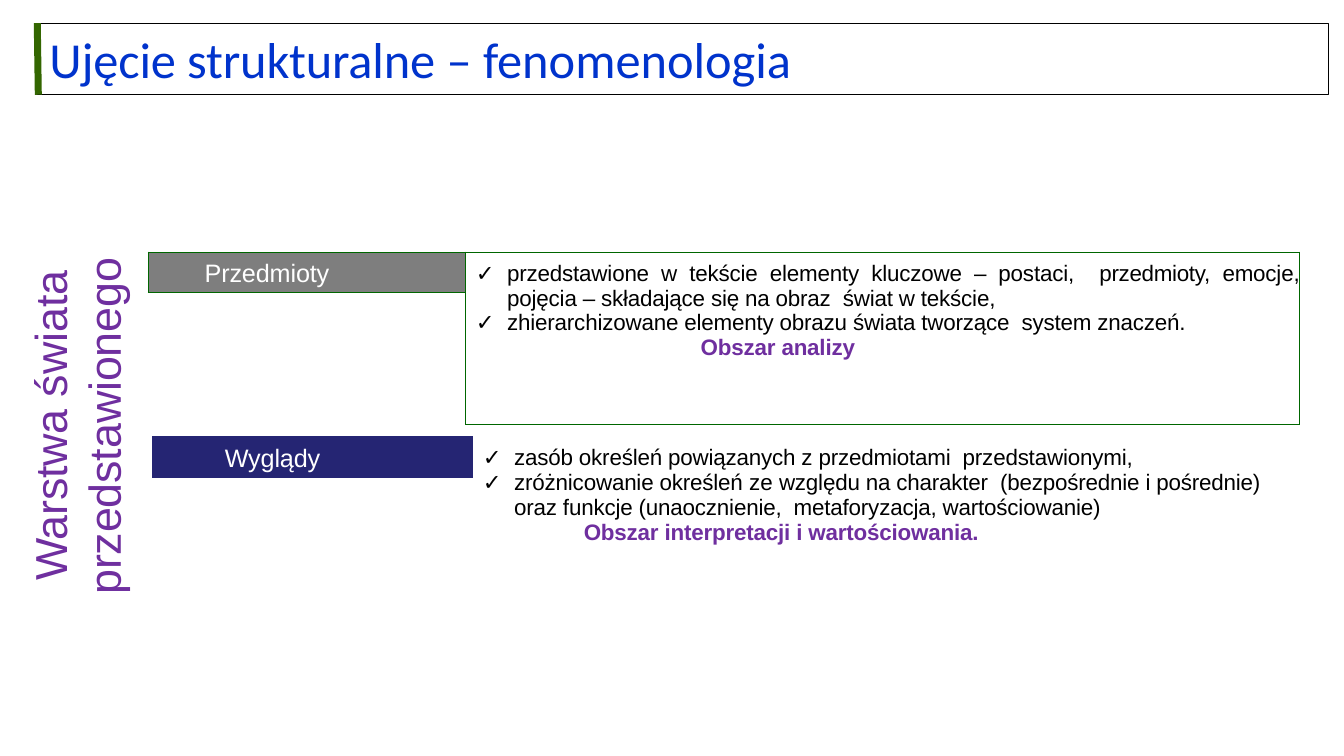
from pptx import Presentation
from pptx.dml.color import RGBColor
from pptx.enum.shapes import MSO_CONNECTOR, MSO_SHAPE
from pptx.enum.text import MSO_ANCHOR, PP_ALIGN
from pptx.oxml import parse_xml
from pptx.oxml.ns import nsdecls, qn
from pptx.util import Inches, Pt

COLORS = {"title": "0033CC", "accent": "336600", "frame": "000000", "border": "006600",
          "purple": "6F2F9F", "gray": "7E7E7E", "navy": "252573",
          "white": "FFFFFF", "text": "000000"}
PLAIN_TABLE = "{2D5ABB26-0587-4C30-8999-92F81FD0307C}"

# Runs are (text, letter spacing in points).
TITLE = [("Ujęcie strukturalne ", -0.1), ("– fenomenologia", 0)]
SIDE_LABEL = [
    (0.15, [("Warstwa ", -0.2), ("świata", 0)]),
    (0.01, [("przedstawionego", -0.1)]),
]
LAYERS = [
    {
        "at": (1.47, 2.5), "columns": (3.15, 8.27), "rows": (0.4, 1.31),
        "label": "Przedmioty", "label_indent": 0.56, "fill": "gray",
        "align": PP_ALIGN.JUSTIFY,
        "points": [
            [("przedstawione w tekście elementy kluczowe – postaci,  ", -0.1),
             ("przedmioty, ", -0.2),
             ("emocje, pojęcia – składające się na obraz  świat w tekście,", -0.1)],
            [("zhierarchizowane elementy obrazu świata tworzące  system znaczeń.", -0.1)],
        ],
        "area": "Obszar analizy", "area_indent": 2.33,
        "borders": {
            (0, 0): {"L": 0.75, "R": 1, "T": 0.75, "B": 0.75},
            (0, 1): {"L": 1, "R": 0.75, "T": 0.75, "B": 0.75},
            (1, 0): {"R": 0.75, "T": 0.75},
            (1, 1): {"L": 0.75, "R": 0.75, "B": 0.75},
        },
    },
    {
        "at": (1.51, 4.33), "columns": (3.18, 8.27), "rows": (0.41, 1.31),
        "label": "Wyglądy", "label_indent": 0.72, "fill": "navy",
        "align": PP_ALIGN.LEFT,
        "points": [
            [("zasób określeń powiązanych z przedmiotami  przedstawionymi,", -0.1)],
            [("zróżnicowanie określeń ", -0.1), ("ze ", 0),
             ("względu na charakter  (bezpośrednie i pośrednie) oraz funkcje "
              "(unaocznienie,  metaforyzacja, wartościowanie)", -0.1)],
        ],
        "area": "Obszar interpretacji i wartościowania.", "area_indent": 1.1,
        "borders": {},
    },
]


def color(name):
    return RGBColor.from_string(COLORS[name])


def set_margins(holder, top):
    holder.margin_left = holder.margin_right = holder.margin_bottom = 0
    holder.margin_top = Inches(top)


def next_paragraph(frame):
    """Return the first paragraph while it is empty, else a new one."""
    first = frame.paragraphs[0]
    return frame.add_paragraph() if first.runs else first


def write(frame, runs, size, tint, font="Arial", left=0, hanging=0, bold=False, bullet=None):
    para = next_paragraph(frame)
    props = para._p.get_or_add_pPr()
    props.set("marL", str(Inches(left)))
    props.set("indent", str(-Inches(hanging)))
    if bullet:
        props.append(parse_xml(f'<a:buFont {nsdecls("a")} typeface="Arial"/>'))
        props.append(parse_xml(f'<a:buChar {nsdecls("a")} char="{bullet}"/>'))
        props.append(parse_xml(f'<a:tabLst {nsdecls("a")}>'
                               f'<a:tab pos="{Inches(left)}" algn="l"/></a:tabLst>'))
    for text, spacing in runs:
        span = para.add_run()
        span.text = text
        span.font.name = font
        span.font.size = Pt(size)
        span.font.bold = bold
        span.font.color.rgb = color(tint)
        span._r.get_or_add_rPr().set("spc", str(round(spacing * 100)))
    return para


def add_text_box(page, left, top, width, height, top_margin=0):
    frame = page.shapes.add_textbox(
        Inches(left), Inches(top), Inches(width), Inches(height)).text_frame
    frame.word_wrap = True
    set_margins(frame, top_margin)
    return frame


def set_borders(cell, widths):
    props = cell._tc.get_or_add_tcPr()
    sides = [side for side in "LRTB" if side in widths]
    for position, side in enumerate(sides):
        props.insert(position, parse_xml(
            f'<a:ln{side} {nsdecls("a")} w="{Pt(widths[side])}"><a:solidFill>'
            f'<a:srgbClr val="{COLORS["border"]}"/></a:solidFill></a:ln{side}>'))


def add_title(page):
    frame = page.shapes.add_shape(
        MSO_SHAPE.RECTANGLE, Inches(0.37), Inches(0.23), Inches(12.81), Inches(0.71))
    frame.shadow.inherit = False
    frame.fill.background()
    frame.line.color.rgb = color("frame")
    frame.line.width = Pt(0.75)

    title = add_text_box(page, 0.42, 0.25, 12.76, 0.63, 0.02)
    title.vertical_anchor = MSO_ANCHOR.MIDDLE
    write(title, TITLE, 36, "title", font="Calibri", left=0.07)

    accent = page.shapes.add_connector(
        MSO_CONNECTOR.STRAIGHT, Inches(0.37), Inches(0.23), Inches(0.38), Inches(0.94))
    accent.line.color.rgb = color("accent")
    accent.line.width = Pt(5)
    accent._element.spPr.append(parse_xml(f'<a:effectLst {nsdecls("a")}/>'))


def add_layer(page, layer):
    left, top = layer["at"]
    columns, rows = layer["columns"], layer["rows"]
    table = page.shapes.add_table(
        len(rows), len(columns), Inches(left), Inches(top),
        Inches(sum(columns)), Inches(sum(rows))).table
    table.first_row = table.horz_banding = False
    table._tbl.tblPr.find(qn("a:tableStyleId")).text = PLAIN_TABLE
    for column, width in zip(table.columns, columns):
        column.width = Inches(width)
    for row, height in zip(table.rows, rows):
        row.height = Inches(height)
    for row in range(len(rows)):
        for column in range(len(columns)):
            cell = table.cell(row, column)
            cell.fill.background()
            set_borders(cell, layer["borders"].get((row, column), {}))

    label, details = table.cell(0, 0), table.cell(0, 1)
    details.merge(table.cell(1, 1))
    label.fill.solid()
    label.fill.fore_color.rgb = color(layer["fill"])
    set_margins(label, 0.08)
    set_margins(details, 0.09)
    write(label.text_frame, [(layer["label"], -0.1)], 18, "white", left=layer["label_indent"])
    for runs in layer["points"]:
        para = write(details.text_frame, runs, 16, "text", left=0.41, hanging=0.31, bullet="✓")
        para.alignment = layer["align"]
    area = write(details.text_frame, [(layer["area"], -0.1)], 16, "purple",
                 left=layer["area_indent"], bold=True)
    area.alignment = layer["align"]


def add_side_label(page):
    frame = add_text_box(page, 0.25, 2.52, 1.04, 3.39)
    frame._txBody.bodyPr.set("vert", "vert270")
    for indent, runs in SIDE_LABEL:
        write(frame, runs, 32, "purple", left=indent)
    frame.paragraphs[0].line_spacing = Pt(36.4)


def main():
    deck = Presentation()
    deck.slide_width, deck.slide_height = Inches(13.33), Inches(7.5)
    page = deck.slides.add_slide(deck.slide_layouts[6])
    add_title(page)
    for layer in LAYERS:
        add_layer(page, layer)
    add_side_label(page)
    deck.save("out.pptx")


if __name__ == "__main__":
    main()
